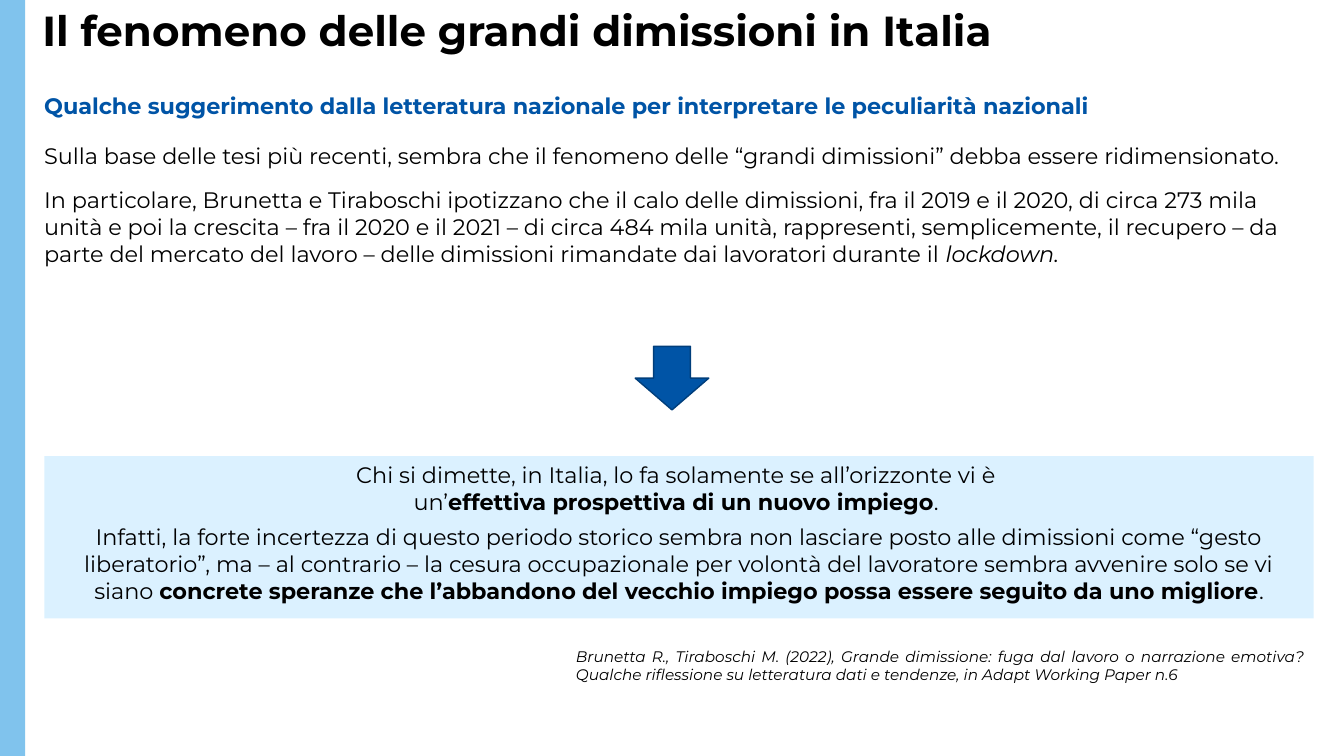
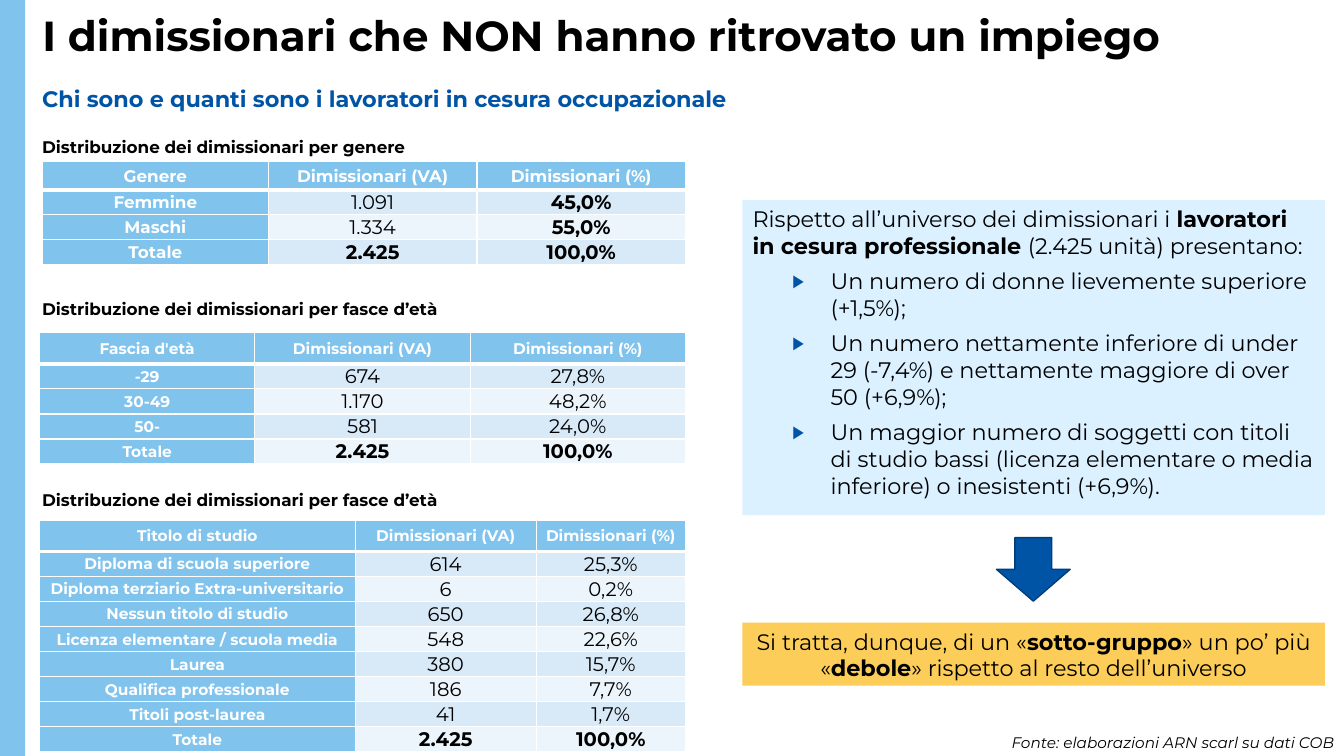
from lxml import etree
from pptx import Presentation
from pptx.dml.color import RGBColor
from pptx.enum.shapes import MSO_SHAPE
from pptx.enum.text import MSO_ANCHOR, MSO_AUTO_SIZE, PP_ALIGN
from pptx.oxml.ns import qn
from pptx.util import Pt

FONT = "Montserrat"
BLACK, WHITE = RGBColor(0, 0, 0), RGBColor(255, 255, 255)
BLUE, DARK_BLUE = RGBColor(0x00, 0x54, 0xA6), RGBColor(0x00, 0x3E, 0x7B)
SKY, PALE = RGBColor(0x80, 0xC3, 0xED), RGBColor(0xCC, 0xEC, 0xFF)
YELLOW = RGBColor(0xFD, 0xB8, 0x13)
ROW_BANDS = RGBColor(0xD8, 0xE9, 0xF8), RGBColor(0xED, 0xF5, 0xFC)

TITLE = dict(size=30, bold=True)
SUBTITLE = dict(size=16, bold=True, color=BLUE, spacing=1.07)
CAPTION = dict(size=12, bold=True)
SOURCE = dict(size=10.9, italic=True)

# In the texts, "|" switches emphasis on and off.
TREND = {
    "title": "Il fenomeno delle grandi dimissioni in Italia",
    "subtitle": "Qualche suggerimento dalla letteratura nazionale per interpretare "
                "le peculiarità nazionali",
    "body": [
        "Sulla base delle tesi più recenti, sembra che il fenomeno delle “grandi "
        "dimissioni” debba essere ridimensionato.",
        "In particolare, Brunetta e Tiraboschi ipotizzano che il calo delle dimissioni, "
        "fra il 2019 e il 2020, di circa 273 mila unità e poi la crescita – fra il 2020 "
        "e il 2021 – di circa 484 mila unità, rappresenti, semplicemente, il recupero – "
        "da parte del mercato del lavoro – delle dimissioni rimandate dai lavoratori "
        "durante il |lockdown.",
    ],
    "conclusion": [
        "Chi si dimette, in Italia, lo fa solamente se all’orizzonte vi è \n"
        "un’|effettiva prospettiva di un nuovo impiego|. ",
        "Infatti, la forte incertezza di questo periodo storico sembra non lasciare posto "
        "alle dimissioni come “gesto liberatorio”, ma – al contrario – la cesura "
        "occupazionale per volontà del lavoratore sembra avvenire solo se vi siano "
        "|concrete speranze che l’abbandono del vecchio impiego possa essere seguito da "
        "uno migliore|.",
    ],
    "source": "Brunetta R., Tiraboschi M. (2022), Grande dimissione: fuga dal lavoro o "
              "narrazione emotiva? Qualche riflessione su letteratura dati e tendenze, in "
              "Adapt Working Paper n.6",
}

PROFILE = {
    "title": "I dimissionari che NON hanno ritrovato un impiego",
    "subtitle": "Chi sono e quanti sono i lavoratori in cesura occupazionale",
    "intro": "Rispetto all’universo dei dimissionari i |lavoratori in cesura "
             "professionale |(2.425 unità) presentano:",
    "findings": [
        "Un numero di donne lievemente superiore (+1,5%);",
        "Un numero nettamente inferiore di under 29 (-7,4%) e nettamente maggiore di "
        "over 50 (+6,9%);",
        "Un maggior numero di soggetti con titoli di studio bassi (licenza elementare o "
        "media inferiore) o inesistenti (+6,9%).",
    ],
    "conclusion": ["Si tratta, dunque, di un «|sotto-gruppo|» un po’ più «|debole|» "
                   "rispetto al resto dell’universo"],
    "source": "Fonte: elaborazioni ARN scarl su dati COB",
}

TABLES = [
    dict(caption="Distribuzione dei dimissionari per genere", caption_top=94,
         head="Genere", left=30.3, top=115.6, widths=(161.4, 149, 149), head_height=20,
         label_size=12, bold_share=True,
         rows=[("Femmine", "1.091", "45,0%"), ("Maschi", "1.334", "55,0%"),
               ("Totale", "2.425", "100,0%")]),
    dict(caption="Distribuzione dei dimissionari per fasce d’età", caption_top=209.5,
         head="Fascia d'età", left=28.3, top=237.6, widths=(153.8, 153.8, 153.8),
         head_height=22.3, label_size=11, bold_share=False,
         rows=[("-29", "674", "27,8%"), ("30-49", "1.170", "48,2%"),
               ("50-", "581", "24,0%"), ("Totale", "2.425", "100,0%")]),
    dict(caption="Distribuzione dei dimissionari per fasce d’età", caption_top=346.3,
         head="Titolo di studio", left=28.3, top=371.6, widths=(225.5, 129.2, 106.7),
         head_height=22.3, label_size=11, bold_share=False,
         rows=[("Diploma di scuola superiore", "614", "25,3%"),
               ("Diploma terziario Extra-universitario", "6", "0,2%"),
               ("Nessun titolo di studio", "650", "26,8%"),
               ("Licenza elementare / scuola media", "548", "22,6%"),
               ("Laurea", "380", "15,7%"), ("Qualifica professionale", "186", "7,7%"),
               ("Titoli post-laurea", "41", "1,7%"), ("Totale", "2.425", "100,0%")]),
]


def sub(parent, tag, **attrs):
    return etree.SubElement(parent, qn(tag), attrs)


def place(shape, box):
    for name, value in zip(("left", "top", "width", "height"), box):
        setattr(shape, name, Pt(value))


def set_bullet(p, bulleted):
    pPr = p._p.get_or_add_pPr()
    pPr.set("marL", str(Pt(55.8) if bulleted else 0))
    pPr.set("indent", str(Pt(-27.4) if bulleted else 0))
    if bulleted:
        sub(sub(pPr, "a:buClr"), "a:srgbClr", val=str(BLUE))
        sub(pPr, "a:buSzPct", val="80000")
        sub(pPr, "a:buChar", char="▶")
    else:
        sub(pPr, "a:buNone")


def write(tf, texts, size=16, bold=False, italic=False, color=BLACK, align=PP_ALIGN.LEFT,
          spacing=1.0, after=0, emphasis="bold", bullets_from=None):
    """Fill a text frame; paragraphs from bullets_from on get a bullet."""
    tf.word_wrap = True
    tf.auto_size = MSO_AUTO_SIZE.NONE
    tf.vertical_anchor = MSO_ANCHOR.TOP
    for i, text in enumerate(texts):
        p = tf.add_paragraph() if i else tf.paragraphs[0]
        set_bullet(p, bullets_from is not None and i >= bullets_from)
        formats = dict(alignment=align, line_spacing=spacing, space_before=Pt(0),
                       space_after=Pt(after))
        for name, value in formats.items():
            setattr(p, name, value)
        for j, part in enumerate(text.split("|")):
            for k, line in enumerate(part.split("\n")):
                if k:
                    p.add_line_break()
                r = p.add_run()
                r.text = line
                font = dict(name=FONT, size=Pt(size), bold=bold, italic=italic)
                if j % 2:
                    font[emphasis] = True
                for name, value in font.items():
                    setattr(r.font, name, value)
                r.font.color.rgb = color


def add_text(s, text, box, **style):
    write(s.shapes.add_textbox(*map(Pt, box)).text_frame, [text], **style)


def add_shape(s, kind, box, fill, line=None):
    sp = s.shapes.add_shape(kind, *map(Pt, box))
    sp.shadow.inherit = False
    sp.fill.solid()
    sp.fill.fore_color.rgb = fill
    if line is None:
        sp.line.fill.background()
    else:
        sp.line.color.rgb = line
        sp.line.width = Pt(1)
    return sp


def tint(sp, color):
    """Fill a shape with a colour at 70% opacity."""
    sp.fill.solid()
    sp.fill.fore_color.rgb = color
    sub(sp.element.spPr.find(".//" + qn("a:srgbClr")), "a:alpha", val="70000")


def add_panel(s, texts, box, color):
    sp = add_shape(s, MSO_SHAPE.RECTANGLE, box, color)
    tint(sp, color)
    write(sp.text_frame, texts, align=PP_ALIGN.CENTER, after=6)


def add_arrow(s, left, top):
    add_shape(s, MSO_SHAPE.DOWN_ARROW, (left, top, 52.6, 45.4), BLUE, DARK_BLUE)


def format_cell(cell, text, fill, top=1, bottom=1, **style):
    tcPr = cell._tc.get_or_add_tcPr()
    for side, width in zip("LRTB", (1, 1, top, bottom)):
        ln = sub(tcPr, "a:ln" + side, w=str(Pt(width)))
        sub(sub(ln, "a:solidFill"), "a:srgbClr", val=str(WHITE))
    cell.fill.solid()
    cell.fill.fore_color.rgb = fill
    cell.margin_left = cell.margin_right = Pt(3.6)
    cell.margin_top = cell.margin_bottom = 0
    write(cell.text_frame, [text], align=PP_ALIGN.CENTER, spacing=1.04, **style)
    cell.vertical_anchor = MSO_ANCHOR.MIDDLE


def add_data_table(s, t):
    add_text(s, t["caption"], (23, t["caption_top"], 320, 21.6), **CAPTION)
    rows = [(t["head"], "Dimissionari (VA)", "Dimissionari (%)")] + t["rows"]
    heights = [t["head_height"]] + [17.9] * len(t["rows"])
    box = t["left"], t["top"], sum(t["widths"]), sum(heights)
    table = s.shapes.add_table(len(rows), len(t["widths"]), *map(Pt, box)).table
    for column, width in zip(table.columns, t["widths"]):
        column.width = Pt(width)
    for i, (values, height) in enumerate(zip(rows, heights)):
        table.rows[i].height = Pt(height)
        borders = dict(top=3 if i == 1 else 1, bottom=1 if i else 3)
        for j, value in enumerate(values):
            if i == 0 or j == 0:
                style = dict(fill=SKY, size=t["label_size"], bold=True, color=WHITE)
            else:
                bold = values[0] == "Totale" or (j == 2 and t["bold_share"])
                style = dict(fill=ROW_BANDS[(i - 1) % 2], size=14, bold=bold)
            format_cell(table.cell(i, j), value, **style, **borders)


def add_slide(prs, content, title_top, subtitle_box):
    s = prs.slides.add_slide(prs.slide_layouts[1])
    place(s.shapes.title, (23, title_top, 901, 44))
    write(s.shapes.title.text_frame, [content["title"]], **TITLE)
    add_text(s, content["subtitle"], subtitle_box, **SUBTITLE)
    return s


def add_trend_slide(prs):
    s = add_slide(prs, TREND, -0.5, (24.5, 61, 913.5, 29))
    body = s.placeholders[1]
    place(body, (24.3, 98.2, 913.7, 106))
    write(body.text_frame, TREND["body"], after=12, emphasis="italic")
    add_arrow(s, 453.7, 247.4)
    add_panel(s, TREND["conclusion"], (31.7, 325.8, 906.7, 116), PALE)
    add_text(s, TREND["source"], (404.3, 458.6, 534.2, 34), align=PP_ALIGN.JUSTIFY, **SOURCE)
    return s


def add_profile_slide(prs):
    s = add_slide(prs, PROFILE, 3, (23, 56, 562, 27))
    for t in TABLES:
        add_data_table(s, t)
    body = s.placeholders[1]
    place(body, (530.3, 143, 416, 225))
    tint(body, PALE)
    write(body.text_frame, [PROFILE["intro"]] + PROFILE["findings"], after=6, bullets_from=1)
    add_arrow(s, 711.8, 384)
    add_panel(s, PROFILE["conclusion"], (530.3, 444.8, 416, 45), YELLOW)
    add_text(s, PROFILE["source"], (680, 519, 280, 21), align=PP_ALIGN.RIGHT, spacing=1.07,
             **SOURCE)


def main():
    prs = Presentation()
    prs.slide_width, prs.slide_height = Pt(960), Pt(540)
    s = add_trend_slide(prs)
    add_profile_slide(prs)
    # The side band belongs to the master, behind everything else.
    band = add_shape(s, MSO_SHAPE.RECTANGLE, (0, 0, 18, 540), SKY)
    prs.slide_master.shapes.element.insert(2, band.element)
    prs.save("out.pptx")


if __name__ == "__main__":
    main()
